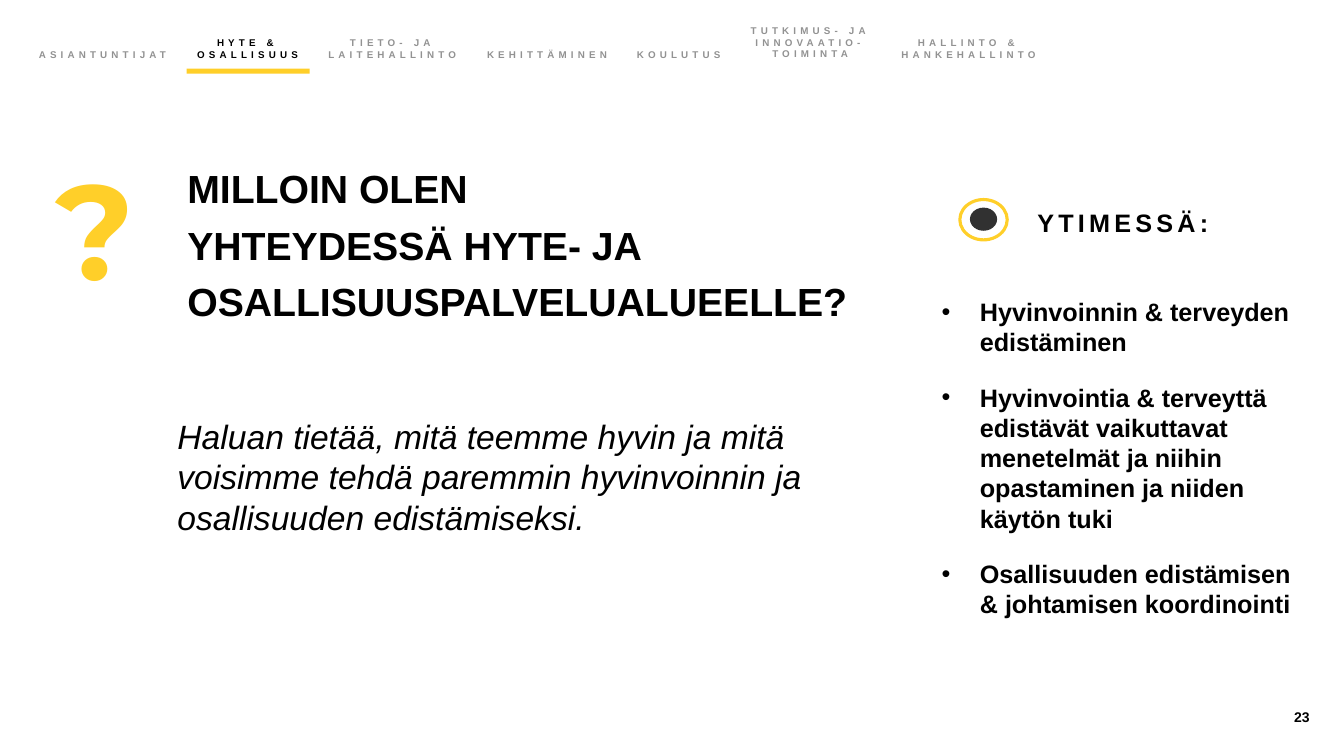
from lxml import etree
from pptx import Presentation
from pptx.dml.color import RGBColor
from pptx.enum.shapes import MSO_SHAPE
from pptx.enum.text import MSO_ANCHOR, MSO_AUTO_SIZE, PP_ALIGN
from pptx.oxml.ns import qn
from pptx.util import Inches, Pt

COLORS = {"black": "000000", "grey": "929292", "yellow": "FFCF29", "pupil": "313131"}


def add_text_box(left, top, width, height, inset=True, anchor=MSO_ANCHOR.TOP):
    box = slide.shapes.add_textbox(Inches(left), Inches(top), Inches(width), Inches(height))
    frame = box.text_frame
    frame.word_wrap = True
    frame.auto_size = MSO_AUTO_SIZE.SHAPE_TO_FIT_TEXT
    frame.vertical_anchor = anchor
    if not inset:
        frame.margin_left = frame.margin_top = frame.margin_right = frame.margin_bottom = 0
    return frame


def add_run(paragraph, text, size, color="black", bold=True, font="Arial", spacing=0):
    run = paragraph.add_run()
    run.text = text
    run.font.name = font
    run.font.size = Pt(size)
    run.font.bold = bold
    run.font.color.rgb = RGBColor.from_string(COLORS[color])
    if spacing:
        run.font._element.set("spc", str(spacing * 100))
    return run


presentation = Presentation()
presentation.slide_width = Inches(13.33)
presentation.slide_height = Inches(7.5)
slide = presentation.slides.add_slide(presentation.slide_layouts[6])

# Page number
page_frame = add_text_box(9.99, 6.91, 3, 0.4, inset=False, anchor=MSO_ANCHOR.MIDDLE)
page_frame.auto_size = MSO_AUTO_SIZE.NONE
page_frame.paragraphs[0].alignment = PP_ALIGN.RIGHT
add_run(page_frame.paragraphs[0], "23", 10)

# Navigation tabs: label, width, number of lines; all share one bottom edge
tabs = [
    ("ASIANTUNTIJAT", 1.35, 1),
    ("HYTE & OSALLISUUS", 1.07, 2),
    ("TIETO- JA LAITEHALLINTO", 1.34, 2),
    ("KEHITTÄMINEN", 1.27, 1),
    ("KOULUTUS", 0.88, 1),
    ("TUTKIMUS- JA INNOVAATIO-TOIMINTA", 1.27, 3),
    ("HALLINTO & HANKEHALLINTO", 1.41, 2),
]
active_tab = 1
tab_left, tab_bottom, tab_gap, line_height = 0.34, 0.6, 0.23, 0.12
for index, (label, width, lines) in enumerate(tabs):
    height = lines * line_height
    tab_frame = add_text_box(tab_left, tab_bottom - height, width, height,
                             inset=False, anchor=MSO_ANCHOR.MIDDLE)
    tab_frame.paragraphs[0].alignment = PP_ALIGN.CENTER
    color = "black" if index == active_tab else "grey"
    add_run(tab_frame.paragraphs[0], label, 7, color, spacing=3)
    tab_left += width + tab_gap

# Marker under the active tab
marker = slide.shapes.add_shape(MSO_SHAPE.RECTANGLE, Inches(1.85), Inches(0.68),
                                Inches(1.22), Inches(0.05))
marker.shadow.inherit = False
marker.fill.solid()
marker.fill.fore_color.rgb = RGBColor.from_string(COLORS["yellow"])
marker.line.fill.background()

# Bulleted core topics
topics = [
    "Hyvinvoinnin & terveyden edistäminen",
    "Hyvinvointia & terveyttä edistävät vaikuttavat menetelmät ja niihin "
    "opastaminen ja niiden käytön tuki",
    "Osallisuuden edistämisen & johtamisen koordinointi",
]
topics_frame = add_text_box(9.24, 2.89, 3.9, 3.33)
for index, topic in enumerate(topics):
    paragraph = topics_frame.add_paragraph() if index else topics_frame.paragraphs[0]
    paragraph.space_after = Pt(18)
    properties = paragraph._p.get_or_add_pPr()
    properties.set("marL", str(Inches(0.38)))
    properties.set("indent", str(-Inches(0.38)))
    bullet_font = etree.SubElement(properties, qn("a:buFont"))
    bullet_font.set("typeface", "Arial")
    bullet = etree.SubElement(properties, qn("a:buChar"))
    bullet.set("char", "•")
    add_run(paragraph, topic, 18)

# Heading of the topics
core_frame = add_text_box(10.19, 2.01, 2.35, 0.4)
core_heading = core_frame.paragraphs[0]
core_heading.space_after = Pt(18)
add_run(core_heading, "YTIMESSÄ", 18, spacing=3)
add_run(core_heading, ":", 18)

# Core icon: dark dot inside a yellow ring
icon = slide.shapes.add_group_shape()
dot = icon.shapes.add_shape(MSO_SHAPE.OVAL, Inches(9.62), Inches(2.06),
                            Inches(0.27), Inches(0.23))
dot.shadow.inherit = False
dot.fill.solid()
dot.fill.fore_color.rgb = RGBColor.from_string(COLORS["pupil"])
dot.line.fill.background()
ring = icon.shapes.add_shape(MSO_SHAPE.OVAL, Inches(9.52), Inches(1.98),
                             Inches(0.47), Inches(0.4))
ring.shadow.inherit = False
ring.fill.background()
ring.line.color.rgb = RGBColor.from_string(COLORS["yellow"])
ring.line.width = Pt(2.25)

# Customer's question
quote_frame = add_text_box(1.76, 4.12, 6.61, 1.21, inset=False, anchor=MSO_ANCHOR.MIDDLE)
quote = add_run(
    quote_frame.paragraphs[0],
    "Haluan tietää, mitä teemme hyvin ja mitä voisimme tehdä paremmin "
    "hyvinvoinnin ja osallisuuden edistämiseksi.",
    24, bold=False)
quote.font.italic = True

# Question mark
question_frame = add_text_box(0.45, 1.4, 5.13, 1.72)
add_run(question_frame.paragraphs[0], "?", 96, "yellow", font="Montserrat")

# Title
title_lines = ["MILLOIN OLEN", "YHTEYDESSÄ HYTE- JA OSALLISUUSPALVELUALUEELLE?"]
title_frame = add_text_box(1.76, 1.49, 7.56, 1.75)
for index, title_line in enumerate(title_lines):
    paragraph = title_frame.add_paragraph() if index else title_frame.paragraphs[0]
    paragraph.line_spacing = 1.2
    add_run(paragraph, title_line, 28)

presentation.save("out.pptx")
